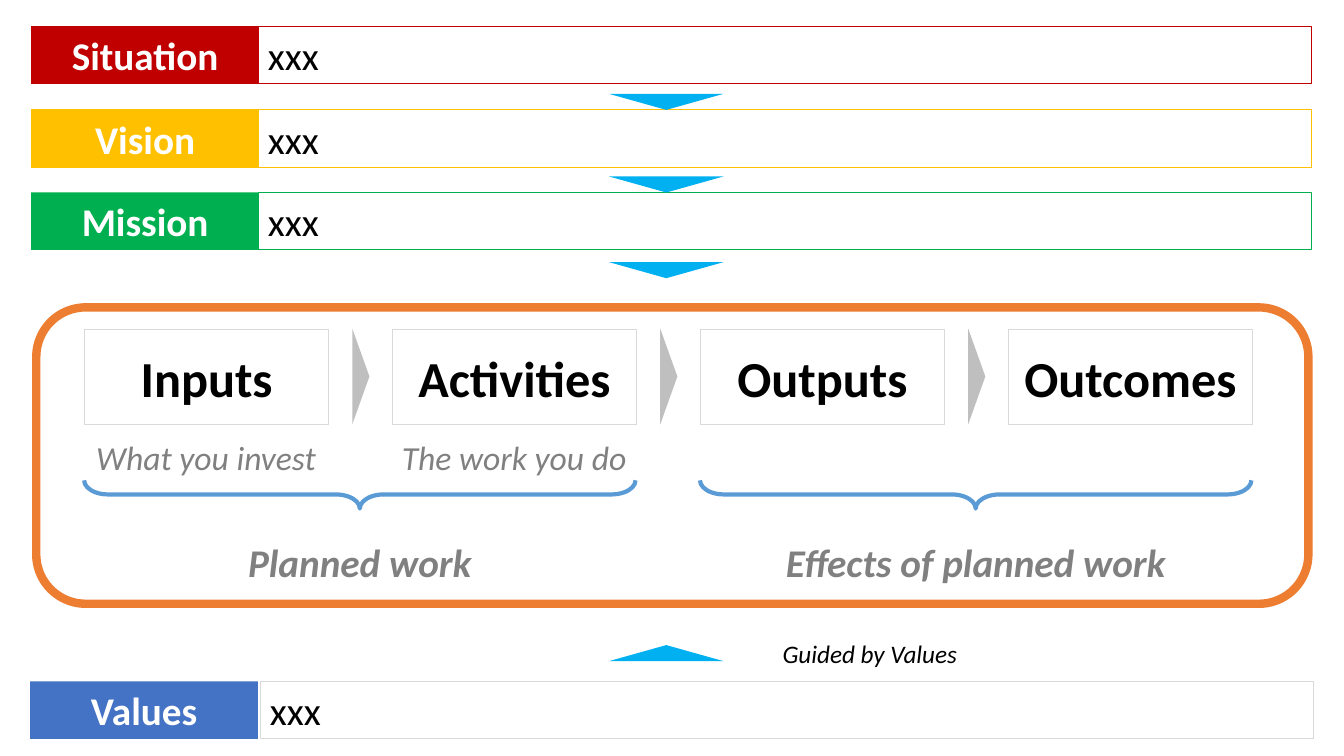
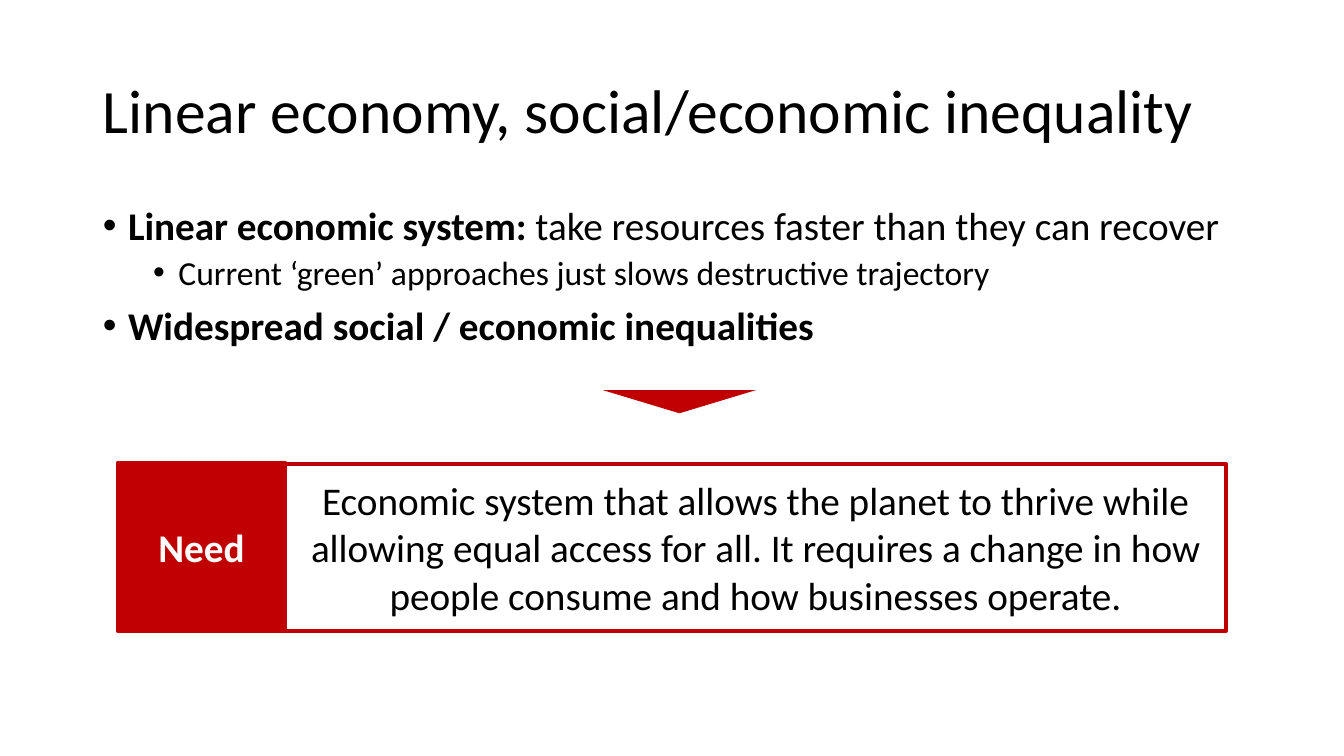
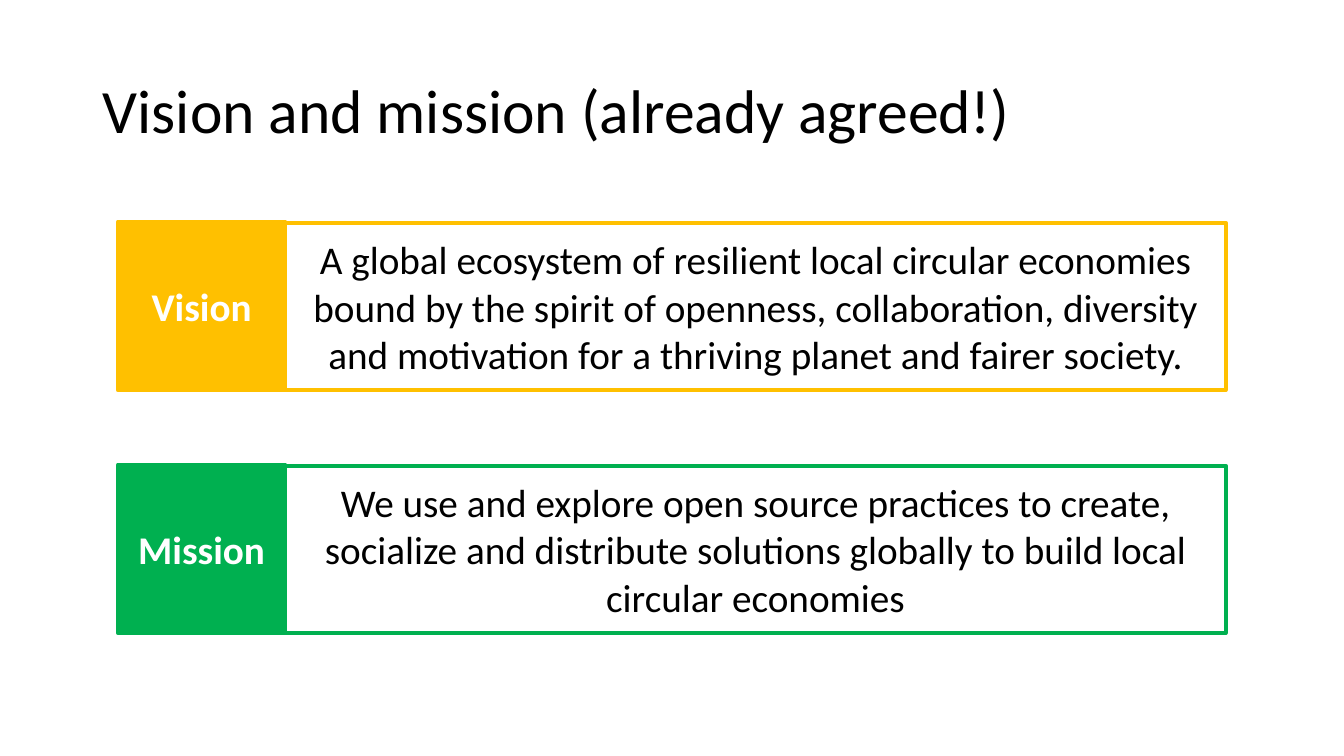
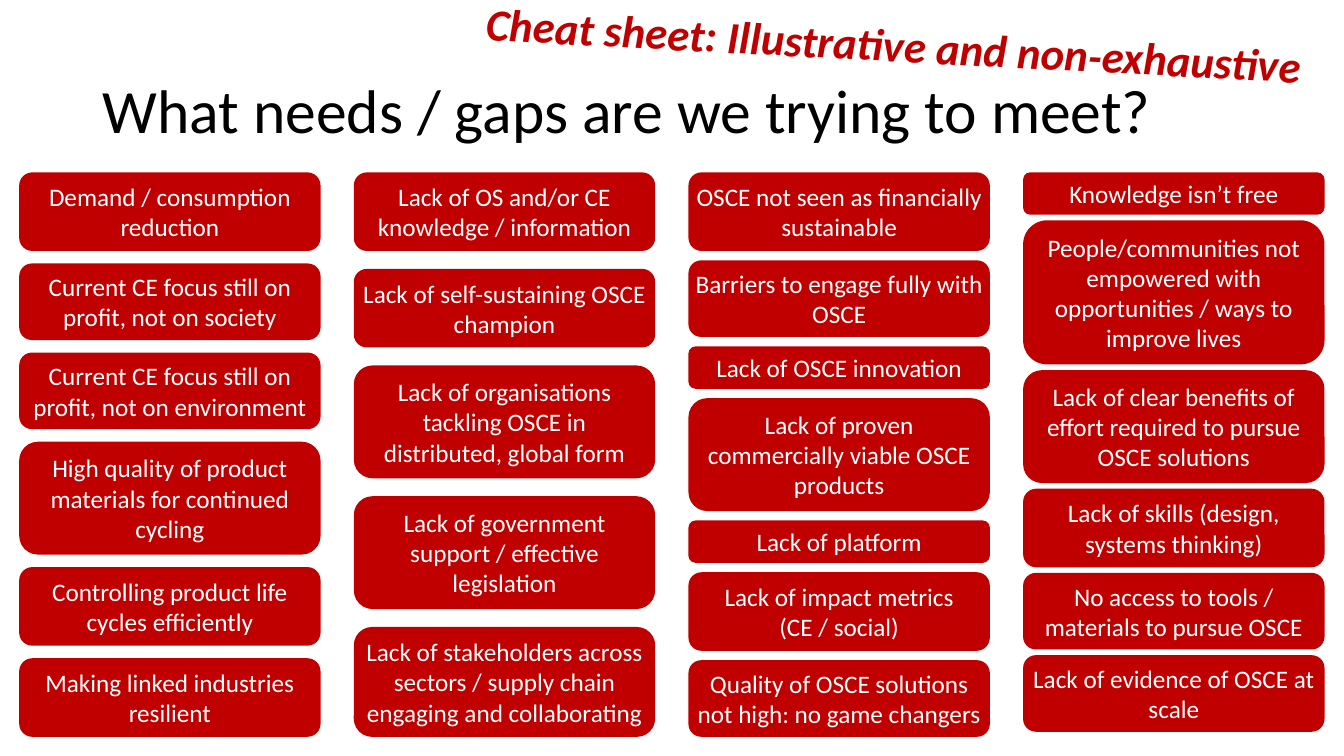
from dataclasses import dataclass

from lxml.etree import SubElement
from pptx import Presentation
from pptx.dml.color import RGBColor
from pptx.enum.shapes import MSO_SHAPE
from pptx.enum.text import MSO_ANCHOR, MSO_AUTO_SIZE, PP_ALIGN
from pptx.oxml.ns import qn
from pptx.util import Pt

PX = 9144  # 100 px to the inch


@dataclass(frozen=True)
class Theme:
    font: str = "Calibri"
    black: str = "000000"
    white: str = "FFFFFF"
    red: str = "C00000"
    gold: str = "FFC000"
    green: str = "00B050"
    blue: str = "4472C4"
    sky: str = "00B0F0"
    brace: str = "5B9BD5"
    orange: str = "ED7D31"
    pale: str = "D9D9D9"
    silver: str = "BFBFBF"
    grey: str = "808080"
    title: int = 44
    step: int = 36
    shout: int = 32
    body: int = 28
    sub: int = 24
    small: int = 18


T = Theme()

# Label, fill, label edge, field edge, label left, field left, top
ROWS = [
    ("Situation", T.red, T.red, T.red, 31, 256, 26),
    ("Vision", T.gold, T.gold, T.gold, 31, 256, 109),
    ("Mission", T.green, None, T.green, 31, 256, 191),
    ("Values", T.blue, None, T.pale, 30, 258, 676),
]
ARROWS = [(93, 180), (175, 180), (260, 180), (640, 0)]  # top, turn
STEPS = [("Inputs", "What you invest"), ("Activities", "The work you do"),
         ("Outputs", None), ("Outcomes", None)]
PHASES = ["Planned work", "Effects of planned work"]

NEED_TITLE = "Linear economy, social/economic inequality"
# Level, bold part, plain part
POINTS = [
    (0, "Linear economic system: ", "take resources faster than they can recover"),
    (1, "", "Current ‘green’ approaches just slows destructive trajectory"),
    (0, "Widespread social / economic inequalities", ""),
]
NEED = ("Need", T.red, 459,
        "Economic system that allows the planet to thrive while allowing equal "
        "access for all. It requires a change in how people consume and how "
        "businesses operate.")

AIMS_TITLE = "Vision and mission (already agreed!)"
AIMS = [
    ("Vision", T.gold, 220,
     "A global ecosystem of resilient local circular economies bound by the "
     "spirit of openness, collaboration, diversity and motivation for a "
     "thriving planet and fairer society."),
    ("Mission", T.green, 461,
     "We use and explore open source practices to create, socialize and "
     "distribute solutions globally to build local circular economies"),
]

GAPS_TITLE = "What needs / gaps are we trying to meet?"
STAMP = "Cheat sheet: Illustrative and non-exhaustive"
# Bottom of each column, then its cards as height and text
GAPS = [
    (731, [
        (78, "Demand / consumption reduction"),
        (76, "Current CE focus still on profit, not on society"),
        (76, "Current CE focus still on profit, not on environment"),
        (112, "High quality of product materials for continued cycling"),
        (78, "Controlling product life cycles efficiently"),
        (78, "Making linked industries resilient"),
    ]),
    (731, [
        (78, "Lack of OS and/or CE knowledge / information"),
        (78, "Lack of self-sustaining OSCE champion"),
        (112, "Lack of organisations tackling OSCE in distributed, global form"),
        (112, "Lack of government support / effective legislation"),
        (109, "Lack of stakeholders across sectors / supply chain\n"
              "engaging and collaborating"),
    ]),
    (731, [
        (78, "OSCE not seen as financially sustainable"),
        (76, "Barriers to engage fully with OSCE"),
        (42, "Lack of OSCE innovation"),
        (112, "Lack of proven commercially viable OSCE products"),
        (42, "Lack of platform"),
        (78, "Lack of impact metrics\n(CE / social)"),
        (76, "Quality of OSCE solutions not high: no game changers"),
    ]),
    (726, [
        (42, "Knowledge isn’t free"),
        (143, "People/communities not empowered with opportunities / ways to "
              "improve lives"),
        (112, "Lack of clear benefits of effort required to pursue OSCE solutions"),
        (78, "Lack of skills (design, systems thinking)"),
        (76, "No access to tools / materials to pursue OSCE"),
        (76, "Lack of evidence of OSCE at scale"),
    ]),
]


def emu(*sizes):
    return [round(size * PX) for size in sizes]


def style(font, size, color=T.black, bold=False, italic=False):
    font.name, font.size = T.font, Pt(size)
    font.bold, font.italic = bold, italic
    font.color.rgb = RGBColor.from_string(color)


def write(shape, text, size, color=T.black, bold=False, italic=False,
          align=PP_ALIGN.CENTER, anchor=MSO_ANCHOR.MIDDLE, inset=None):
    frame = shape.text_frame
    frame.text = text
    frame.word_wrap = True
    frame.auto_size = MSO_AUTO_SIZE.NONE
    frame.vertical_anchor = anchor
    if inset is not None:
        frame.margin_left = frame.margin_right = inset * PX
        frame.margin_top = frame.margin_bottom = inset * PX
    for para in frame.paragraphs:
        para.alignment = align
        style(para.font, size, color, bold, italic)


def draw(shapes, kind, at, fill=None, line=None, weight=0.75, turn=0):
    shape = shapes.add_shape(kind, *emu(*at))
    shape.shadow.inherit = False
    shape.rotation = turn
    if fill:
        shape.fill.solid()
        shape.fill.fore_color.rgb = RGBColor.from_string(fill)
    else:
        shape.fill.background()
    if line:
        shape.line.color.rgb = RGBColor.from_string(line)
        shape.line.width = Pt(weight)
    else:
        shape.line.fill.background()
    return shape


def note(slide, at, text, size, color=T.grey, bold=False, turn=0):
    """Add an italic caption."""
    shape = slide.shapes.add_textbox(*emu(*at))
    shape.rotation = turn
    write(shape, text, size, color, bold, True, anchor=MSO_ANCHOR.TOP)


def place(shape, *at):
    shape.left, shape.top, shape.width, shape.height = emu(*at)


def start(prs, layout, title=None):
    slide = prs.slides.add_slide(prs.slide_layouts[layout])
    if title:
        head = slide.shapes.title
        place(head, 92, 40, 1150, 145)
        write(head, title, T.title, align=PP_ALIGN.LEFT)
        head.text_frame.paragraphs[0].line_spacing = 0.9
    return slide


def panel(slide, label, color, top, text):
    """Group a coloured tag with the framed statement beside it."""
    shapes = slide.shapes.add_group_shape().shapes
    field = draw(shapes, MSO_SHAPE.RECTANGLE, (283, top + 1, 933, 166),
                 line=color, weight=3)
    write(field, text, T.body)
    tag = draw(shapes, MSO_SHAPE.RECTANGLE, (117, top, 166, 167),
               color, color, 3)
    write(tag, label, T.body, T.white, True)


def bullet(para, level):
    props = para._p.get_or_add_pPr()
    props.set("marL", str((25 + 50 * level) * PX))
    props.set("indent", str(-25 * PX))
    SubElement(props, qn("a:buFont")).set("typeface", "Arial")
    SubElement(props, qn("a:buChar")).set("char", "•")


def model(prs):
    slide = start(prs, 6)
    shapes = slide.shapes
    for label, fill, edge, frame, left, mid, top in ROWS:
        tag = draw(shapes, MSO_SHAPE.RECTANGLE, (left, top, 226, 57), fill, edge)
        write(tag, label, T.body, T.white, True, anchor=MSO_ANCHOR.TOP)
        field = draw(shapes, MSO_SHAPE.RECTANGLE, (mid, top, 1045, 57), line=frame)
        write(field, "xxx", T.body, align=PP_ALIGN.LEFT, anchor=MSO_ANCHOR.TOP)
    for top, turn in ARROWS:
        draw(shapes, MSO_SHAPE.ISOSCELES_TRIANGLE, (604, top, 114, 16), T.sky,
             turn=turn)
    note(slide, (763, 628, 200, 40), "Guided by Values", T.small, T.black)

    pitch = 305.5
    for i, (name, hint) in enumerate(STEPS):
        left = 84 + i * pitch
        step = draw(shapes, MSO_SHAPE.RECTANGLE, (left, 327, 242, 94), line=T.pale)
        write(step, name, T.step, bold=True)
        if hint:
            note(slide, (left - 4, 429, 249, 50), hint, T.sub)
        if i:
            draw(shapes, MSO_SHAPE.ISOSCELES_TRIANGLE,
                 (left - 79, 365, 95, 17), T.silver, turn=90)
    for i, phase in enumerate(PHASES):
        left = i * 2 * pitch
        brace = draw(shapes, MSO_SHAPE.LEFT_BRACE, (343 + left, 217, 28, 547),
                     line=T.brace, weight=3, turn=270)
        brace.adjustments[0] = 0.85
        note(slide, (126 + left, 529, 462, 57), phase, T.body, bold=True)
    draw(shapes, MSO_SHAPE.ROUNDED_RECTANGLE, (36, 305, 1262, 294),
         line=T.orange, weight=6)


def need(prs):
    slide = start(prs, 1, NEED_TITLE)
    body = slide.placeholders[1]
    place(body, 92, 200, 1150, 476)
    frame = body.text_frame
    frame.auto_size = MSO_AUTO_SIZE.NONE
    for i, (level, strong, plain) in enumerate(POINTS):
        para = frame.add_paragraph() if i else frame.paragraphs[0]
        para.level = level
        para.line_spacing = 0.9
        para.space_before = Pt(5 if level else 10)
        bullet(para, level)
        for text, bold in ((strong, True), (plain, False)):
            if text:
                run = para.add_run()
                run.text = text
                style(run.font, T.sub if level else T.body, bold=bold)
    draw(slide.shapes, MSO_SHAPE.ISOSCELES_TRIANGLE, (598, 387, 152, 23),
         T.red, turn=180)
    panel(slide, *NEED)


def aims(prs):
    slide = start(prs, 5, AIMS_TITLE)
    for aim in AIMS:
        panel(slide, *aim)


def gaps(prs):
    slide = start(prs, 5, GAPS_TITLE)
    for i, (end, cards) in enumerate(GAPS):
        top = 171
        space = (end - top - sum(high for high, _ in cards)) / (len(cards) - 1)
        for high, text in cards:
            card = draw(slide.shapes, MSO_SHAPE.ROUNDED_RECTANGLE,
                        (19 + 332 * i, top, 299, high), T.red)
            write(card, text, T.small, T.white, inset=3)
            top += high + space
    note(slide, (444, 12, 882, 118), STAMP, T.shout, T.red, True, 3)


def main():
    prs = Presentation()
    prs.slide_width, prs.slide_height = emu(1333.33, 750)
    for build in (model, need, aims, gaps):
        build(prs)
    prs.save("out.pptx")


if __name__ == "__main__":
    main()
